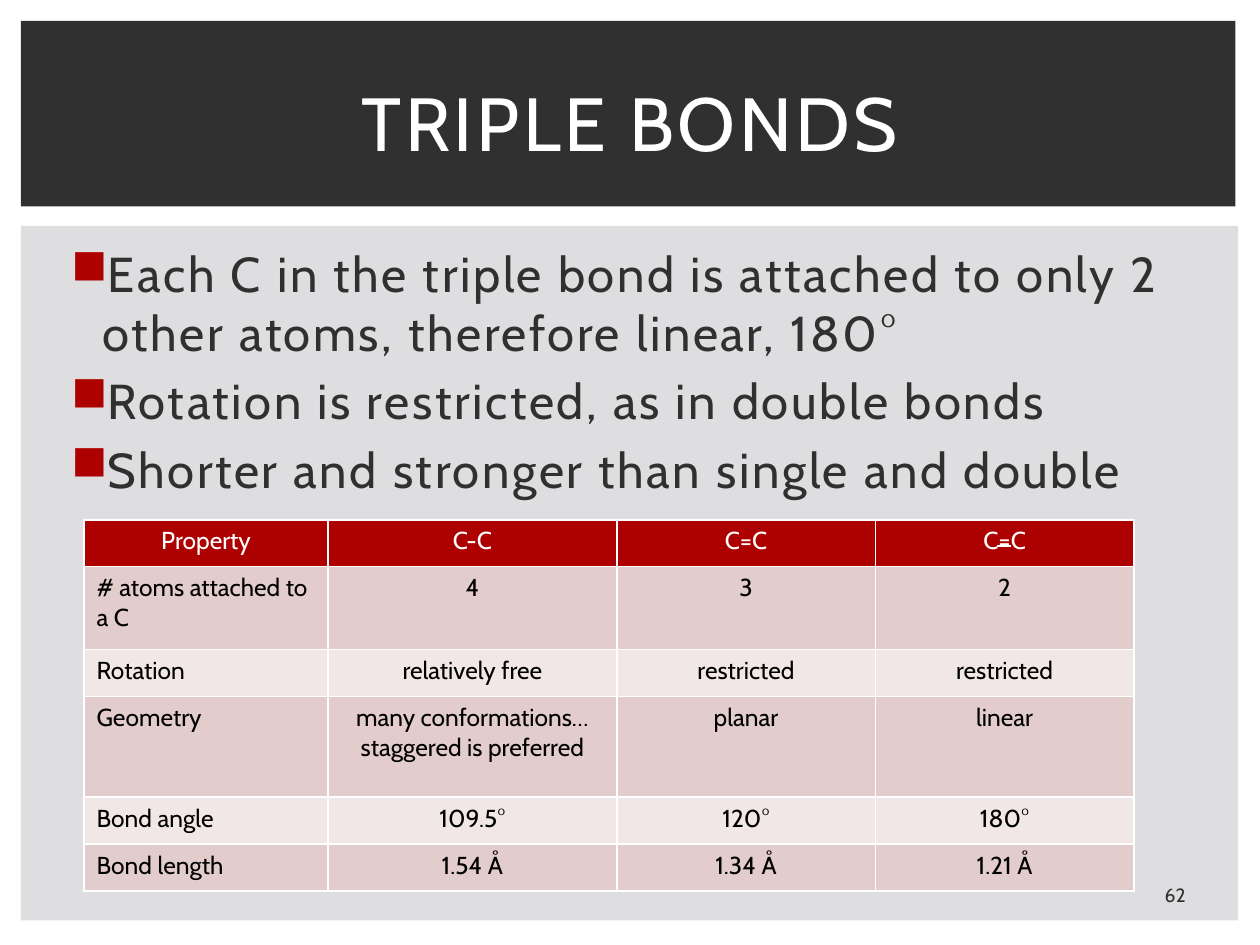
from lxml import etree
from pptx import Presentation
from pptx.dml.color import RGBColor
from pptx.enum import shapes, text
from pptx.oxml import ns
from pptx.util import Pt

FONT = "Cabin"
DARK, PALE, RED, WHITE, BLACK = "303030", "DEDEE0", "AD0101", "FFFFFF", "000000"
BANDS = ["E3CCCC", "F1E7E7"]
CENTER, LEFT = text.PP_ALIGN.CENTER, text.PP_ALIGN.LEFT

TITLE = "TRIPLE BONDS"
BULLETS = [
    "Each C in the triple bond is attached to only 2 other atoms, therefore linear, 180°",
    "Rotation is restricted, as in double bonds",
    "Shorter and stronger than single and double",
]
PAGE_NUMBER = "62"
PROPERTIES = [
    ["Property", "C-C", "C=C", "C=C"],
    ["# atoms attached to a C", "4", "3", "2"],
    ["Rotation", "relatively free", "restricted", "restricted"],
    ["Geometry", "many conformations…\nstaggered is preferred", "planar", "linear"],
    ["Bond angle", "109.5°", "120°", "180°"],
    ["Bond length", "1.54 Å", "1.34 Å", "1.21 Å"],
]
COLUMN_WIDTHS = [139.5, 165, 147.75, 147.75]
ROW_HEIGHTS = [26.85, 47.25, 26.85, 57.6, 26.85, 26.85]

# left, top, width, height
PANEL_BOX = (12, 129, 695.5, 397)
BANNER_BOX = (12, 12, 694, 106)
TITLE_BOX = (30, 28, 660, 83)
BULLETS_BOX = (30, 135.5, 662, 347)
NUMBER_BOX = (648.5, 500.5, 46, 21.5)
TABLE_LEFT, TABLE_TOP = 48, 297
THIRD_BOND = (570, 577.5, 312)  # from x, to x, y


def color(code):
    return RGBColor.from_string(code)


def points(values):
    return [Pt(value) for value in values]


def add_xml(parent, tag, **attributes):
    return etree.SubElement(parent, ns.qn(tag), attributes)


def write(frame, words, size, ink, align=LEFT, spacing=0, bullet=None, before=0):
    """Fill a text frame, one paragraph to each line of words."""
    frame.word_wrap = True
    for index, line in enumerate(words.split("\n")):
        paragraph = frame.paragraphs[0] if index == 0 else frame.add_paragraph()
        paragraph.alignment = align
        paragraph.space_before = Pt(before)
        run = paragraph.add_run()
        run.text = line
        run.font.name, run.font.size = FONT, Pt(size)
        run.font.color.rgb = color(ink)
        if spacing:
            run.font._element.set("spc", str(int(spacing * 100)))
        if bullet:
            properties = paragraph._p.get_or_add_pPr()
            properties.set("marL", str(Pt(21.6)))
            properties.set("indent", str(Pt(-18)))
            add_xml(add_xml(properties, "a:buClr"), "a:srgbClr", val=bullet)
            add_xml(properties, "a:buChar", char="■")


def add_panel(slide, box, fill):
    panel = slide.shapes.add_shape(shapes.MSO_SHAPE.RECTANGLE, *points(box))
    panel.shadow.inherit = False
    panel.fill.solid()
    panel.fill.fore_color.rgb = color(fill)
    panel.line.fill.background()


def add_text(slide, box, words, anchor=text.MSO_ANCHOR.MIDDLE, **style):
    frame = slide.shapes.add_textbox(*points(box)).text_frame
    frame.vertical_anchor = anchor
    write(frame, words, **style)


def style_cell(cell, fill):
    properties = cell._tc.get_or_add_tcPr()
    for side in ("a:lnL", "a:lnR", "a:lnT", "a:lnB"):
        border = add_xml(properties, side, w=str(Pt(1)))
        add_xml(add_xml(border, "a:solidFill"), "a:srgbClr", val=WHITE)
    cell.fill.solid()
    cell.fill.fore_color.rgb = color(fill)


def add_properties(slide):
    table = slide.shapes.add_table(
        len(PROPERTIES), len(COLUMN_WIDTHS),
        *points((TABLE_LEFT, TABLE_TOP, sum(COLUMN_WIDTHS), sum(ROW_HEIGHTS)))).table
    for column, width in zip(table.columns, COLUMN_WIDTHS):
        column.width = Pt(width)
    for r, (values, height) in enumerate(zip(PROPERTIES, ROW_HEIGHTS)):
        table.rows[r].height = Pt(height)
        for c, value in enumerate(values):
            header = r == 0
            cell = table.cell(r, c)
            style_cell(cell, RED if header else BANDS[(r - 1) % 2])
            write(cell.text_frame, value, 14, WHITE if header else BLACK,
                  align=CENTER if header or c else LEFT)


def add_third_bond(slide):
    """Draw the short bar that turns the last C=C into a triple bond."""
    start, end, y = THIRD_BOND
    bar = slide.shapes.add_connector(
        shapes.MSO_CONNECTOR.STRAIGHT, *points((start, y, end, y)))
    bar.line.color.rgb = color(WHITE)
    bar.line.width = Pt(0.79)
    add_xml(bar._element.spPr, "a:effectLst")


def main():
    deck = Presentation()
    deck.slide_width, deck.slide_height = Pt(720), Pt(540)
    slide = deck.slides.add_slide(deck.slide_layouts[6])
    add_panel(slide, PANEL_BOX, PALE)
    add_panel(slide, BANNER_BOX, DARK)
    add_text(slide, BULLETS_BOX, "\n".join(BULLETS), anchor=text.MSO_ANCHOR.TOP,
             size=28, ink=DARK, spacing=1.5, bullet=RED, before=5.6)
    add_text(slide, NUMBER_BOX, PAGE_NUMBER, size=11, ink=DARK, align=CENTER)
    add_text(slide, TITLE_BOX, TITLE, size=43, ink=WHITE, align=CENTER, spacing=2)
    add_properties(slide)
    add_third_bond(slide)
    deck.save("out.pptx")


if __name__ == "__main__":
    main()
